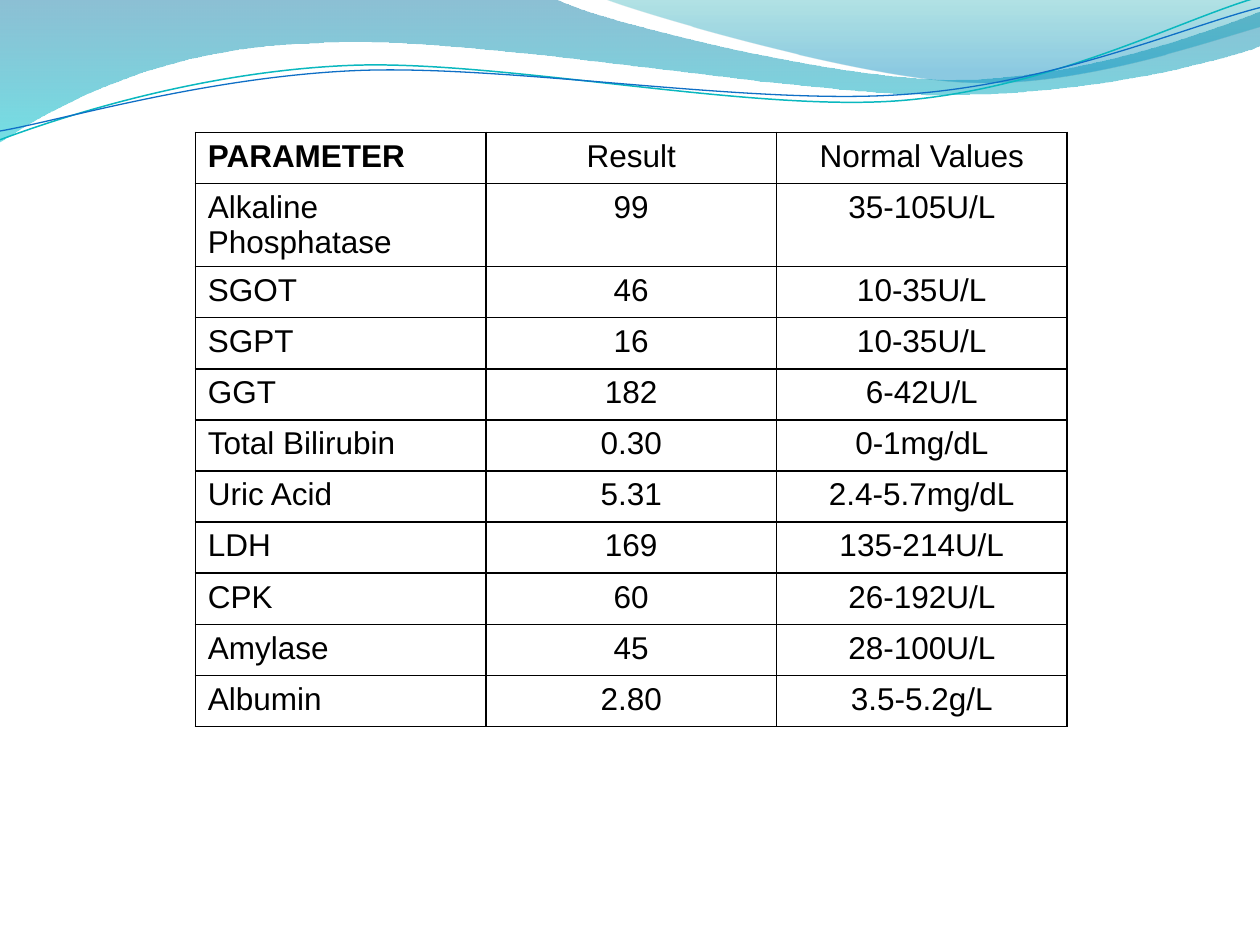
import math

from lxml import etree
from pptx import Presentation
from pptx import util as u
from pptx.dml.color import RGBColor
from pptx.enum import text
from pptx.oxml import ns

WIDTH, HEIGHT = 10, 7.5
LINE_TILT = -2.7

# An outline is a start point, then lines (one point) and curves (three points).
BROAD_WAVE = [
    [(0, 0)], [(4.4, -0.01)],
    [(4.76, 0.17), (6.64, 0.63), (7.58, 0.63)],
    [(8.53, 0.63), (9.58, 0.26), (10, 0.09)],
    [(10.01, 0.36)],
    [(9.83, 0.44), (8.7, 0.76), (7.46, 0.75)],
    [(6.22, 0.75), (3.82, 0.28), (2.57, 0.34)],
    [(1.29, 0.36), (0.46, 0.83), (-0.01, 1.13)],
    [(0, 0)],
]
RIGHT_WAVE = [
    [(4.79, -0.01)],
    [(5.09, 0.11), (6.82, 0.62), (7.69, 0.65)],
    [(8.56, 0.69), (9.61, 0.32), (10, 0.21)],
    [(10, 0)], [(4.79, -0.01)],
]
TEAL_LINE = [
    [(0, 1.11)],
    [(0.48, 0.93), (1.58, 0.57), (2.77, 0.52)],
    [(3.95, 0.47), (5.93, 0.89), (7.13, 0.8)],
    [(8.33, 0.71), (9.38, 0.15), (9.98, -0.02)],
]
BLUE_LINE = [
    [(0, 1.04)],
    [(0.47, 0.96), (1.64, 0.61), (2.83, 0.56)],
    [(4.03, 0.51), (5.97, 0.84), (7.17, 0.75)],
    [(8.36, 0.67), (9.41, 0.21), (10, 0.06)],
]

RESULTS = [
    ("PARAMETER", "Result", "Normal Values"),
    ("Alkaline Phosphatase", "99", "35-105U/L"),
    ("SGOT", "46", "10-35U/L"),
    ("SGPT", "16", "10-35U/L"),
    ("GGT", "182", "6-42U/L"),
    ("Total Bilirubin", "0.30", "0-1mg/dL"),
    ("Uric Acid", "5.31", "2.4-5.7mg/dL"),
    ("LDH", "169", "135-214U/L"),
    ("CPK", "60", "26-192U/L"),
    ("Amylase", "45", "28-100U/L"),
    ("Albumin", "2.80", "3.5-5.2g/L"),
]


def colour(code):
    return RGBColor.from_string(code)


def turn(outline, degrees, centre):
    cos, sin = math.cos(math.radians(degrees)), math.sin(math.radians(degrees))
    cx, cy = centre
    return [[(cx + (x - cx) * cos - (y - cy) * sin, cy + (x - cx) * sin + (y - cy) * cos)
             for x, y in segment] for segment in outline]


def add_outline(page, outline, box, close):
    """Add a freeform that fills the box, and draw the outline in it with true curves."""
    left, top, width, height = box
    builder = page.shapes.build_freeform(u.Inches(left), u.Inches(top))
    builder.add_line_segments([(u.Inches(left + width), u.Inches(top + height))], close=False)
    shape = builder.convert_to_shape()
    shape.shadow.inherit = False
    track = shape._element.find(".//" + ns.qn("a:path"))
    for child in list(track):
        track.remove(child)
    for index, segment in enumerate(outline):
        kind = "moveTo" if index == 0 else "lnTo" if len(segment) == 1 else "cubicBezTo"
        command = etree.SubElement(track, ns.qn(f"a:{kind}"))
        for x, y in segment:
            etree.SubElement(command, ns.qn("a:pt"),
                             x=str(u.Inches(x - left)), y=str(u.Inches(y - top)))
    if close:
        etree.SubElement(track, ns.qn("a:close"))
    return shape


def add_wave(page, outline, box, stops):
    """Add a shape with a top-down gradient; stops are (position, colour, opacity)."""
    wave = add_outline(page, outline, box, close=True)
    wave.line.fill.background()
    wave.fill.gradient()
    wave.fill.gradient_angle = 270
    for stop, (position, code, _) in zip(wave.fill.gradient_stops, stops):
        stop.position = position
        stop.color.rgb = colour(code)
    codes = wave._element.spPr.iter(ns.qn("a:srgbClr"))
    for element, (_, _, opacity) in zip(codes, stops):
        etree.SubElement(element, ns.qn("a:alpha"), val=str(opacity * 1000))


def add_tilted_line(page, outline, box, code, weight):
    left, top, width, height = box
    level = turn(outline, -LINE_TILT, (left + width / 2, top + height / 2))
    line = add_outline(page, level, box, close=False)
    line.rotation = LINE_TILT
    line.fill.background()
    line.line.color.rgb = colour(code)
    line.line.width = u.Pt(weight)


def set_borders(cell, code):
    properties = cell._tc.get_or_add_tcPr()
    for index, side in enumerate(("lnL", "lnR", "lnT", "lnB")):
        border = etree.Element(ns.qn(f"a:{side}"), w=str(u.Pt(1)))
        fill = etree.SubElement(border, ns.qn("a:solidFill"))
        etree.SubElement(fill, ns.qn("a:srgbClr"), val=code)
        properties.insert(index, border)


def fill_cell(cell, words, align, bold):
    cell.fill.background()
    set_borders(cell, "000000")
    cell.text = words
    para = cell.text_frame.paragraphs[0]
    para.alignment = align
    para.font.name = "Arial"
    para.font.size = u.Pt(18)
    para.font.bold = bold
    para.font.color.rgb = colour("000000")


def add_results_table(page):
    height = u.Inches(0.673 * HEIGHT)
    frame = page.shapes.add_table(
        len(RESULTS), len(RESULTS[0]), u.Inches(0.155 * WIDTH), u.Inches(0.14 * HEIGHT),
        u.Inches(0.692 * WIDTH), height)
    table = frame.table
    table.first_row = table.horz_banding = False
    for row in table.rows:
        row.height = u.Pt(29.2)
    frame.height = height
    for r, record in enumerate(RESULTS):
        for c, words in enumerate(record):
            align = text.PP_ALIGN.CENTER if c else text.PP_ALIGN.LEFT
            fill_cell(table.cell(r, c), words, align, bold=r == c == 0)


def main():
    deck = Presentation()
    deck.slide_width, deck.slide_height = u.Inches(WIDTH), u.Inches(HEIGHT)
    page = deck.slides.add_slide(deck.slide_layouts[6])
    add_wave(page, BROAD_WAVE, (-0.01, -0.01, 10.02, 1.14),
             [(0, "0074A1", 45), (1, "00C6CF", 55)])
    add_wave(page, RIGHT_WAVE, (4.79, -0.01, 5.21, 0.7),
             [(0, "00A1A9", 30), (0.8, "008BBF", 45)])
    add_tilted_line(page, TEAL_LINE, (-0.02, 0.22, 10.02, 0.71), "0AB8BF", 0.85)
    add_tilted_line(page, BLUE_LINE, (-0.02, 0.3, 10.03, 0.58), "0F6FC6", 0.75)
    add_results_table(page)
    deck.save("out.pptx")


if __name__ == "__main__":
    main()
